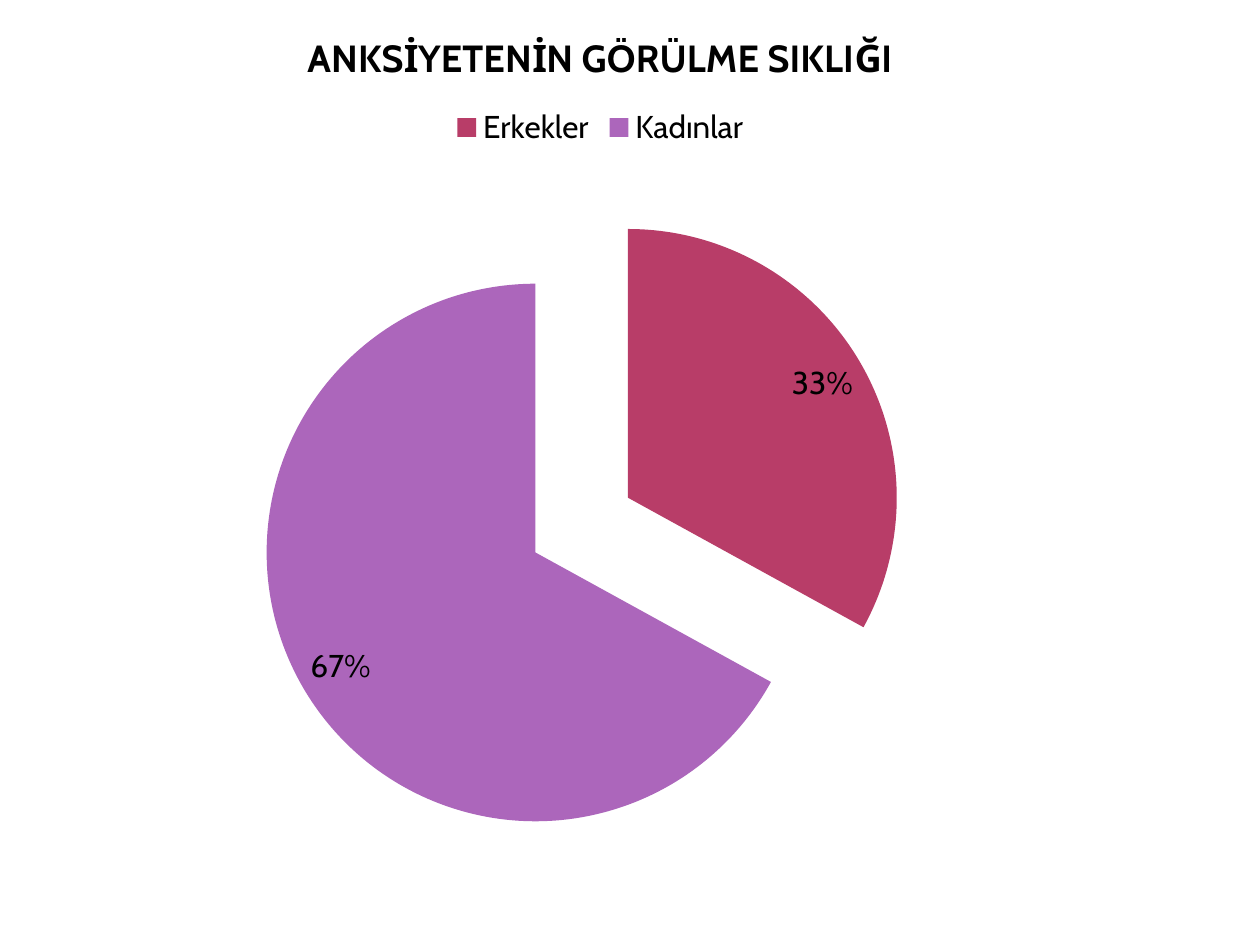
from lxml.etree import SubElement
from pptx import Presentation
from pptx.chart.data import CategoryChartData
from pptx.dml.color import RGBColor
from pptx.enum.chart import XL_CHART_TYPE, XL_LABEL_POSITION, XL_LEGEND_POSITION
from pptx.oxml.ns import qn
from pptx.util import Pt

COLORS = {"text": "000000", "Erkekler": "B83D68", "Kadınlar": "AC66BB"}
SHARES = {"Erkekler": 33, "Kadınlar": 67}
EXPLOSIONS = {"Erkekler": 12, "Kadınlar": 28}
FONT = "Cabin"


def set_font(font, size, bold=False):
    """Apply the chart's typeface, colour and given size to a font."""
    for name, value in {"name": FONT, "size": Pt(size), "bold": bold}.items():
        setattr(font, name, value)
    font.color.rgb = RGBColor.from_string(COLORS["text"])


def explode(point, percent):
    """Move one pie slice out from the centre."""
    sp_pr = point.format.fill._xPr
    explosion = SubElement(sp_pr.getparent(), qn("c:explosion"))
    explosion.set("val", str(percent))
    sp_pr.addprevious(explosion)


def add_frequency_pie(slide, left, top, width, height):
    """Place the exploded pie with title, legend and percentages in a box."""
    data = CategoryChartData()
    data.categories = list(SHARES)
    data.add_series("Series 1", list(SHARES.values()))
    box = [Pt(v) for v in (left, top, width, height)]
    chart = slide.shapes.add_chart(XL_CHART_TYPE.PIE, *box, data).chart
    set_font(chart.font, 18)

    chart.has_title = True
    tf = chart.chart_title.text_frame
    tf.text = "ANKSİYETENİN GÖRÜLME SIKLIĞI"
    set_font(tf.paragraphs[0].runs[0].font, 21.6, bold=True)
    chart.chart_title.include_in_layout = False

    chart.has_legend = True
    chart.legend.position = XL_LEGEND_POSITION.TOP
    chart.legend.include_in_layout = False
    set_font(chart.legend.font, 18)

    plot = chart.plots[0]
    plot.vary_by_categories = True
    for i, name in enumerate(SHARES):
        point = plot.series[0].points[i]
        point.format.fill.solid()
        point.format.fill.fore_color.rgb = RGBColor.from_string(COLORS[name])
        point.format.line.fill.background()
        explode(point, EXPLOSIONS[name])

    plot.has_data_labels = True
    labels = plot.data_labels
    formats = {
        "show_percentage": True,
        "show_value": False,
        "number_format": "0%",
        "number_format_is_linked": False,
        "position": XL_LABEL_POSITION.INSIDE_END,
    }
    for name, value in formats.items():
        setattr(labels, name, value)
    set_font(labels.font, 18)


def main():
    """Build the presentation and save it."""
    prs = Presentation()
    prs.slide_width, prs.slide_height = Pt(720), Pt(540)
    slide = prs.slides.add_slide(prs.slide_layouts[6])
    add_frequency_pie(slide, 0, 0, 686, 500.4)
    prs.save("out.pptx")


if __name__ == "__main__":
    main()
